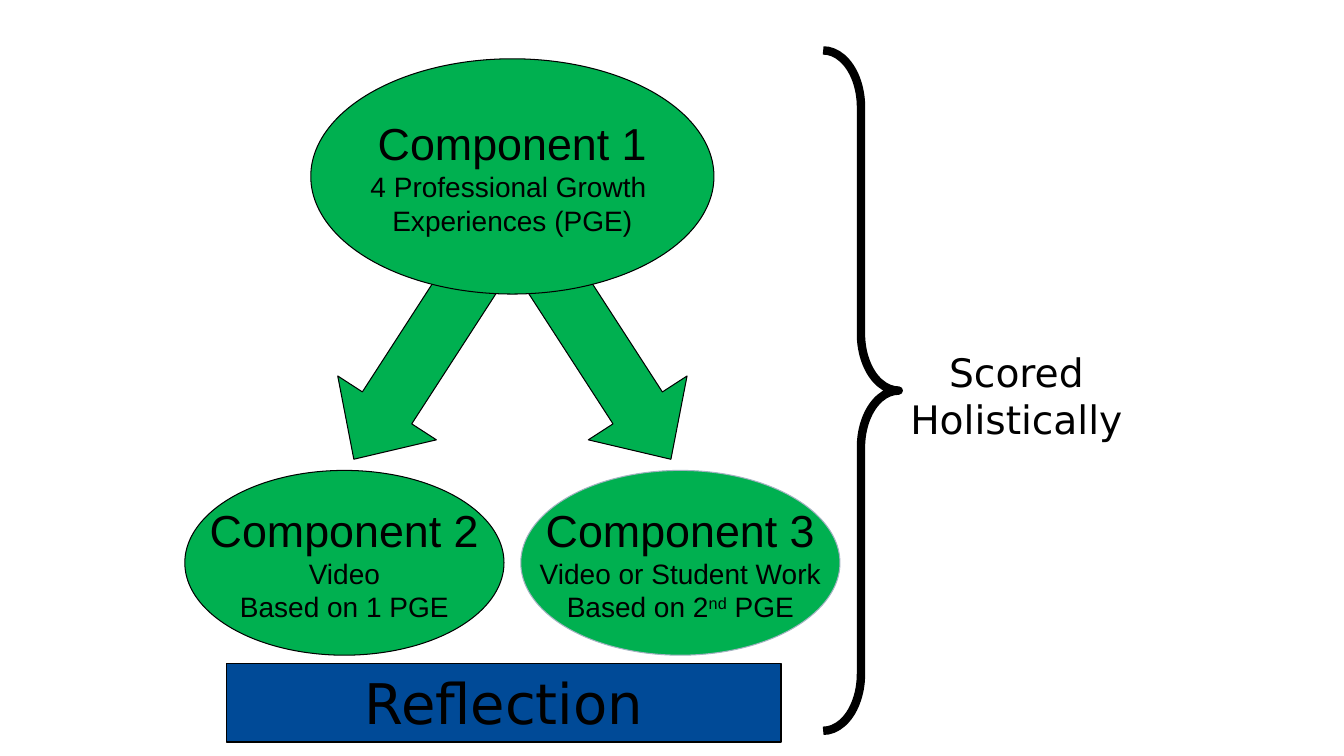
from pptx import Presentation
from pptx.dml.color import RGBColor
from pptx.enum import shapes, text
from pptx.util import Pt

GREEN = RGBColor(0x00, 0xB0, 0x50)
BLUE = RGBColor(0x00, 0x4A, 0x97)
GREY = RGBColor(0xA3, 0xB2, 0xC1)
BLACK = RGBColor(0, 0, 0)
LABEL_FONT = "DejaVu Sans"
COMPONENT_FONT = "Arial"
SUPERSCRIPT = "nd"


def add_preset(slide, kind, box, fill=None, line=BLACK, line_width=0.75):
    """Add a preset shape; box is left, top, width and height in points."""
    shape = slide.shapes.add_shape(kind, *map(Pt, box))
    shape.shadow.inherit = False
    if fill is None:
        shape.fill.background()
    else:
        shape.fill.solid()
        shape.fill.fore_color.rgb = fill
    shape.line.color.rgb = line
    shape.line.width = Pt(line_width)
    return shape


def format_paragraph(paragraph, font_name, size):
    paragraph.alignment = text.PP_ALIGN.CENTER
    for run in paragraph.runs:
        run.font.name = font_name
        run.font.size = Pt(size)
        run.font.color.rgb = BLACK


def add_component(slide, box, heading, details, line=BLACK):
    """Add a green ellipse; each detail line is a list of run texts."""
    shape = add_preset(slide, shapes.MSO_SHAPE.OVAL, box, GREEN, line)
    frame = shape.text_frame
    frame.word_wrap = False
    frame.vertical_anchor = text.MSO_ANCHOR.MIDDLE
    frame.text = heading
    format_paragraph(frame.paragraphs[0], COMPONENT_FONT, 32)
    for run_texts in details:
        paragraph = frame.add_paragraph()
        for run_text in run_texts:
            run = paragraph.add_run()
            run.text = run_text
            if run_text == SUPERSCRIPT:
                run._r.get_or_add_rPr().set("baseline", "30000")
        format_paragraph(paragraph, COMPONENT_FONT, 20)


def add_arrow(slide, left, rotation):
    arrow = add_preset(slide, shapes.MSO_SHAPE.DOWN_ARROW, (left, 168, 84, 174), GREEN)
    arrow.adjustments[0] = 0.5
    arrow.adjustments[1] = 0.52
    arrow.rotation = rotation


def add_brace(slide):
    brace = add_preset(slide, shapes.MSO_SHAPE.RIGHT_BRACE, (588, 36, 54, 486), line_width=6)
    brace.adjustments[0] = 0.75
    brace.adjustments[1] = 0.5


def set_label(shape, label, size):
    frame = shape.text_frame
    frame.word_wrap = True
    frame.vertical_anchor = text.MSO_ANCHOR.TOP
    frame.text = label
    format_paragraph(frame.paragraphs[0], LABEL_FONT, size)


def main():
    presentation = Presentation()
    presentation.slide_width = Pt(960)
    presentation.slide_height = Pt(540)
    slide = presentation.slides.add_slide(presentation.slide_layouts[6])

    add_arrow(slide, 258, 32.9)
    add_arrow(slide, 390, -32.9)
    add_component(slide, (222, 42, 288, 168), "Component 1",
                  [["4 Professional Growth "], ["Experiences (PGE)"]])

    reflection = add_preset(slide, shapes.MSO_SHAPE.RECTANGLE, (162, 474, 396, 56),
                            BLUE, line_width=1)
    set_label(reflection, "Reflection", 40)

    add_brace(slide)
    score = slide.shapes.add_textbox(Pt(636), Pt(245), Pt(180), Pt(74))
    set_label(score, "Scored Holistically", 28)

    add_component(slide, (132, 336, 228, 132), "Component 2",
                  [["Video"], ["Based on 1 PGE"]])
    add_component(slide, (372, 336, 228, 132), "Component 3",
                  [["Video or Student Work"], ["Based on 2", SUPERSCRIPT, " PGE"]], GREY)

    presentation.save("out.pptx")


if __name__ == "__main__":
    main()
